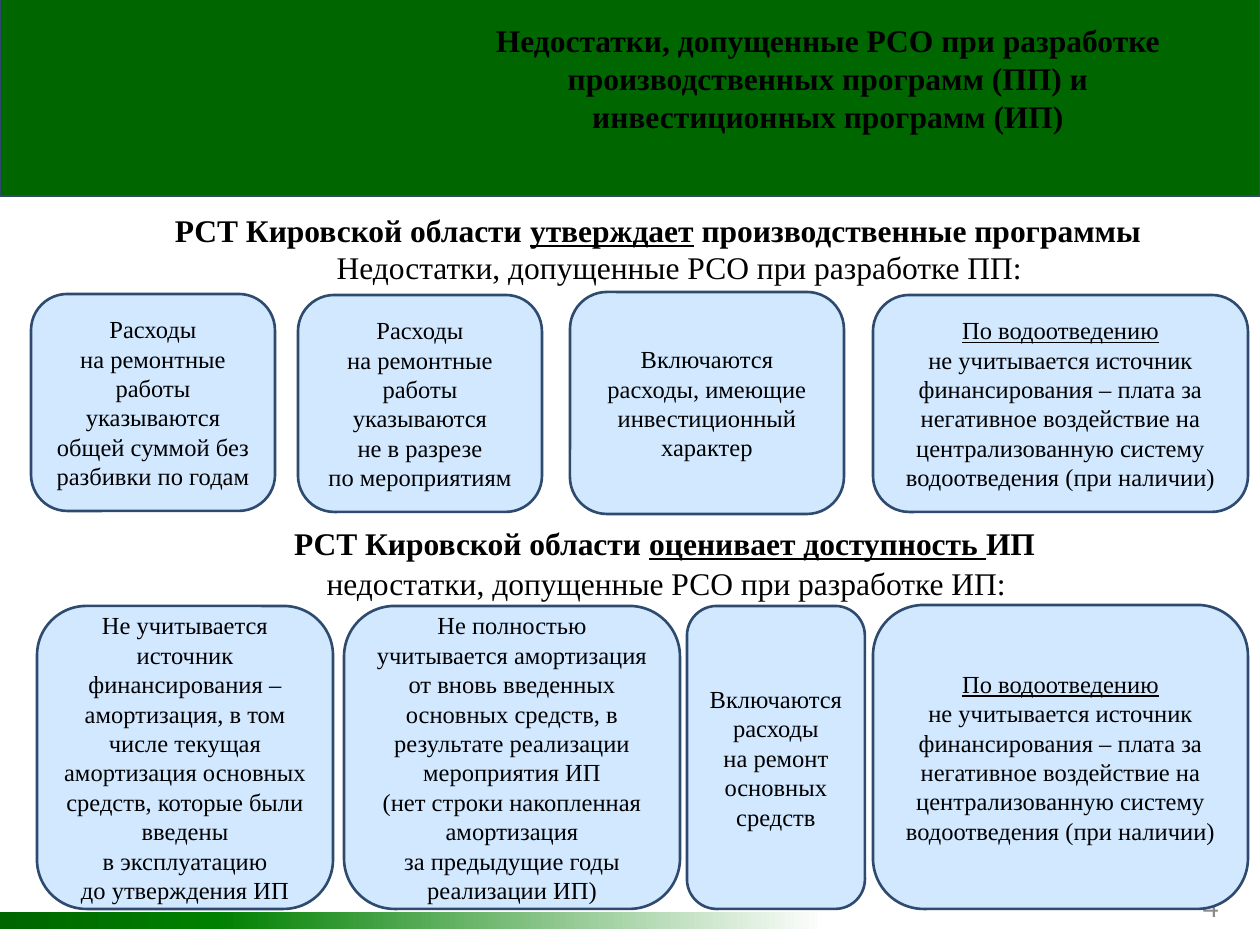
from dataclasses import dataclass
from lxml import etree
from pptx import Presentation
from pptx import util as u
from pptx.dml.color import RGBColor
from pptx.enum import shapes, text
from pptx.oxml.ns import qn

PX = 914400 / 126
CENTER, RIGHT = text.PP_ALIGN.CENTER, text.PP_ALIGN.RIGHT


@dataclass(frozen=True)
class Theme:
    serif: str = "Times New Roman"
    sans: str = "Calibri"
    ink: str = "000000"
    muted: str = "8C8C8C"
    band: str = "006600"
    card: str = "D1E8FF"
    outline: str = "2E4B6F"
    fade: tuple = ((0, "006600"), (26, "008000"), (100, "FFFFFF"))
    heading: int = 18
    body: int = 14
    line: float = 1.5


T = Theme()

SEWERAGE = [
    [("По водоотведению", {"underline": True})],
    "не учитывается источник финансирования – плата за негативное воздействие "
    "на централизованную систему водоотведения (при наличии)",
]

# Each card: x, y, width, height relative to its section, then its paragraphs
PRODUCTION_CARDS = [
    ((31, 89, 244, 217), ["Расходы",
                          "на ремонтные работы указываются общей суммой без разбивки по годам"]),
    ((298, 90, 244, 217), ["Расходы", "на ремонтные работы указываются",
                           "не в разрезе", "по мероприятиям"]),
    ((570, 87, 274, 222), ["Включаются расходы, имеющие инвестиционный характер"]),
    ((873, 90, 375, 217), SEWERAGE),
]
INVESTMENT_CARDS = [
    ((37, 88, 296, 303), ["Не учитывается источник финансирования – амортизация, в том числе "
                          "текущая амортизация основных средств, которые были введены",
                          "в эксплуатацию", "до утверждения ИП"]),
    ((344, 88, 336, 303), ["Не полностью учитывается амортизация от вновь введенных основных "
                           "средств, в результате реализации мероприятия ИП",
                           "(нет строки накопленная амортизация",
                           "за предыдущие годы реализации ИП)"]),
    ((687, 88, 178, 303), ["Включаются расходы", "на ремонт основных средств"]),
    ((873, 87, 375, 304), SEWERAGE),
]


def px(*values):
    return [u.Emu(round(v * PX)) for v in values]


def rgb(value):
    return RGBColor.from_string(value)


def write(sp, paragraphs, size, anchor=text.MSO_ANCHOR.TOP, align=CENTER,
          font=T.serif, color=T.ink, bold=False):
    """Fill a shape; a paragraph is a string or a list of (text, format) runs."""
    tf = sp.text_frame
    for name, value in {"word_wrap": True, "vertical_anchor": anchor,
                        "auto_size": text.MSO_AUTO_SIZE.NONE}.items():
        setattr(tf, name, value)
    for i, runs in enumerate(paragraphs):
        p = tf.paragraphs[0] if i == 0 else tf.add_paragraph()
        p.alignment = align
        for words, extra in [(runs, {})] if isinstance(runs, str) else runs:
            r = p.add_run()
            r.text = words
            look = {"name": font, "size": u.Pt(size), "bold": bold, **extra}
            for name, value in look.items():
                setattr(r.font, name, value)
            r.font.color.rgb = rgb(color)


def add_text(s, box, paragraphs, size, **look):
    write(s.shapes.add_textbox(*px(*box)), paragraphs, size, **look)


def add_block(s, kind, box, fill=None, line=None):
    sp = s.shapes.add_shape(kind, *px(*box))
    sp.shadow.inherit = False
    if fill:
        sp.fill.solid()
        sp.fill.fore_color.rgb = rgb(fill)
    if line:
        sp.line.color.rgb = rgb(line)
        sp.line.width = u.Pt(T.line)
    else:
        sp.line.fill.background()
    return sp


def header(s, x, y, w, h):
    """Green band with the slide title on its right side."""
    add_block(s, shapes.MSO_SHAPE.RECTANGLE, (x, y, w, h), T.band, T.outline)
    title = s.shapes.title
    s.shapes._spTree.append(title._element)  # bring the title in front of the band
    title.left, title.top, title.width, title.height = px(x + 441, y + 19, 774, 127)
    write(title, ["Недостатки, допущенные РСО при разработке производственных "
                  "программ (ПП) и инвестиционных программ (ИП)"], T.heading, bold=True)


def footer(s, x, y, w, h):
    """Fading stripe and the slide number."""
    stripe = add_block(s, shapes.MSO_SHAPE.RECTANGLE, (x, y, w, h))
    stripe.fill.gradient()
    stripe.fill.gradient_angle = 0
    stops = stripe._element.spPr.find(qn("a:gradFill")).find(qn("a:gsLst"))
    for old in list(stops):
        stops.remove(old)
    for position, color in T.fade:
        stop = etree.SubElement(stops, qn("a:gs"), pos=str(position * 1000))
        etree.SubElement(stop, qn("a:srgbClr"), val=color)
    add_text(s, (x + 1155, y - 32, 76, 50), ["4"], T.heading, align=RIGHT,
             anchor=text.MSO_ANCHOR.MIDDLE, font=T.sans, color=T.muted)


def section(s, x, y, heading, heading_box, subheading, subheading_box, cards):
    """Two centred heading lines above a row of rounded cards."""
    for box, line, bold in ((heading_box, heading, True), (subheading_box, subheading, False)):
        left, top, w, h = box
        add_text(s, (x + left, y + top, w, h), [line], T.heading, bold=bold)
    for (left, top, w, h), paragraphs in cards:
        sp = add_block(s, shapes.MSO_SHAPE.ROUNDED_RECTANGLE,
                       (x + left, y + top, w, h), T.card, T.outline)
        write(sp, paragraphs, T.body, anchor=text.MSO_ANCHOR.MIDDLE)


def main():
    prs = Presentation()
    prs.slide_width, prs.slide_height = px(1260, 945)
    s = prs.slides.add_slide(prs.slide_layouts[5])

    header(s, 0, -4, 1260, 200)
    footer(s, 0, 912, 828, 17)

    # Production programmes
    section(s, 0, 205,
            [("РСТ Кировской области ", {}), ("утверждает", {"underline": True}),
             (" производственные программы", {})], (28, 0, 1260, 50),
            "Недостатки, допущенные РСО при разработке ПП:", (96, 37, 1167, 50),
            PRODUCTION_CARDS)

    # Investment programmes
    section(s, 0, 518,
            [("РСТ Кировской области ", {}), ("оценивает доступность ", {"underline": True}),
             ("ИП", {})], (81, 0, 1167, 50),
            "недостатки, допущенные РСО при разработке ИП:", (83, 40, 1167, 50),
            INVESTMENT_CARDS)

    prs.save("out.pptx")


if __name__ == "__main__":
    main()
